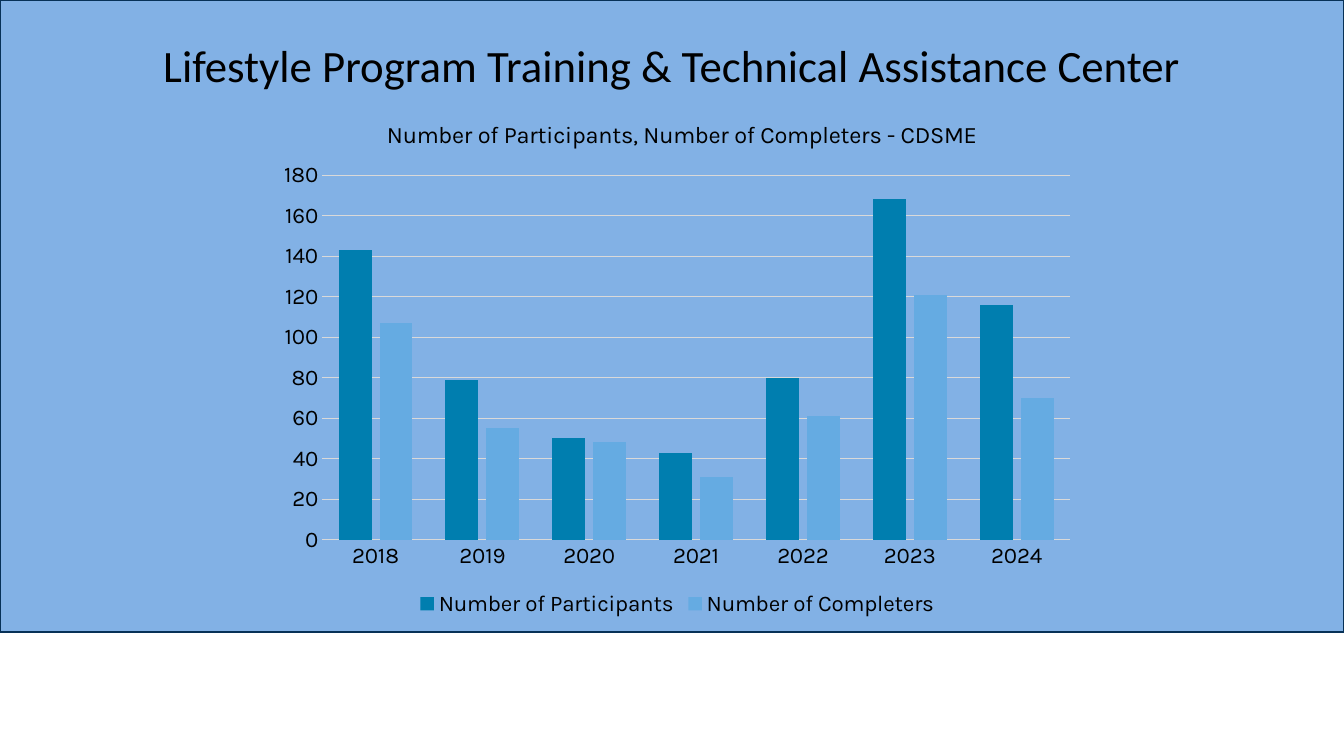
from lxml import etree
from pptx import Presentation
from pptx.chart.data import CategoryChartData
from pptx.dml.color import RGBColor
from pptx.enum.chart import XL_CHART_TYPE, XL_LEGEND_POSITION, XL_TICK_MARK
from pptx.enum.shapes import MSO_SHAPE
from pptx.enum.text import MSO_ANCHOR, PP_ALIGN
from pptx.oxml.ns import qn
from pptx.util import Pt

RECT = MSO_SHAPE.RECTANGLE
COLUMNS = XL_CHART_TYPE.COLUMN_CLUSTERED
BOTTOM = XL_LEGEND_POSITION.BOTTOM
NO_TICK = XL_TICK_MARK.NONE
MIDDLE = MSO_ANCHOR.MIDDLE
CENTER = PP_ALIGN.CENTER

BLACK = RGBColor(0x00, 0x00, 0x00)
SKY = RGBColor(0x82, 0xB1, 0xE5)
NAVY = RGBColor(0x07, 0x31, 0x57)
GRID = RGBColor(0xD9, 0xD9, 0xD9)
TEAL = RGBColor(0x00, 0x7E, 0xAF)
LIGHT_BLUE = RGBColor(0x65, 0xAB, 0xE2)

YEARS = ["2018", "2019", "2020", "2021", "2022", "2023", "2024"]
SERIES = [
    ("Number of Participants", [143, 79, 50, 43, 80, 168, 116], TEAL),
    ("Number of Completers", [107, 55, 48, 31, 61, 121, 70], LIGHT_BLUE),
]


def set_font(font, name, size):
    for key, value in {"name": name, "size": Pt(size), "bold": False}.items():
        setattr(font, key, value)
    font.color.rgb = BLACK


def set_layout(parent, values):
    """Place a chart part by fractions of the chart area."""
    layout = parent.find(qn("c:layout"))
    if layout is None:
        layout = etree.Element(qn("c:layout"))
        before = parent.find(qn("c:tx"))
        parent.insert(0 if before is None else parent.index(before) + 1, layout)
    manual = etree.SubElement(layout, qn("c:manualLayout"))
    for tag, value in values.items():
        etree.SubElement(manual, qn(f"c:{tag}")).set("val", str(value))


prs = Presentation()
prs.slide_width, prs.slide_height = Pt(960), Pt(540)
s = prs.slides.add_slide(prs.slide_layouts[5])

# Blue panel, behind the title
panel = s.shapes.add_shape(RECT, 0, 0, Pt(960), Pt(451.5))
panel.shadow.inherit = False
panel.fill.solid()
panel.fill.fore_color.rgb = SKY
panel.line.color.rgb = NAVY
panel.line.width = Pt(0.85)
title = s.shapes.title
title.element.addprevious(panel.element)

# Title
title.left, title.top, title.width, title.height = Pt(66), Pt(29), Pt(828), Pt(39)
tf = title.text_frame
tf.word_wrap = True
tf.vertical_anchor = MIDDLE
tf.margin_top = tf.margin_bottom = 0
p = tf.paragraphs[0]
p.alignment = CENTER
p.line_spacing = 0.9
r = p.add_run()
r.text = "Lifestyle Program Training & Technical Assistance Center"
set_font(r.font, "Calibri", 32)

# Chart
data = CategoryChartData()
data.categories = YEARS
for name, values, color in SERIES:
    data.add_series(name, values)
chart = s.shapes.add_chart(
    COLUMNS, Pt(191.5), Pt(67.7), Pt(584.6), Pt(375.8), data).chart
set_font(chart.font, "Karla", 14)

# Chart title
p = chart.chart_title.text_frame.paragraphs[0]
r = p.add_run()
r.text = "Number of Participants, Number of Completers - CDSME"
set_font(r.font, "Karla", 16.8)
chart.chart_title.include_in_layout = False
set_layout(chart.chart_title._element,
           {"xMode": "edge", "yMode": "edge", "x": 0.14, "y": 0.04})

# Columns
plot = chart.plots[0]
plot.gap_width = 100
plot.overlap = -24
plot.vary_by_categories = False
for series, (name, values, color) in zip(plot.series, SERIES):
    series.format.fill.solid()
    series.format.fill.fore_color.rgb = color
set_layout(chart._chartSpace.chart.plotArea,
           {"layoutTarget": "inner", "xMode": "edge", "yMode": "edge",
            "x": 0.066, "y": 0.153, "w": 0.914, "h": 0.693})

# Axes and gridlines
years, counts = chart.category_axis, chart.value_axis
for axis in (years, counts):
    axis.major_tick_mark = axis.minor_tick_mark = NO_TICK
    set_font(axis.tick_labels.font, "Karla", 16)
counts.minimum_scale, counts.maximum_scale, counts.major_unit = 0, 180, 20
counts.format.line.fill.background()
for line, width in ((years.format.line, 1), (counts.major_gridlines.format.line, 0.75)):
    line.color.rgb = GRID
    line.width = Pt(width)

# Legend
chart.has_legend = True
chart.legend.position = BOTTOM
chart.legend.include_in_layout = False
set_font(chart.legend.font, "Karla", 16)

prs.save("out.pptx")
